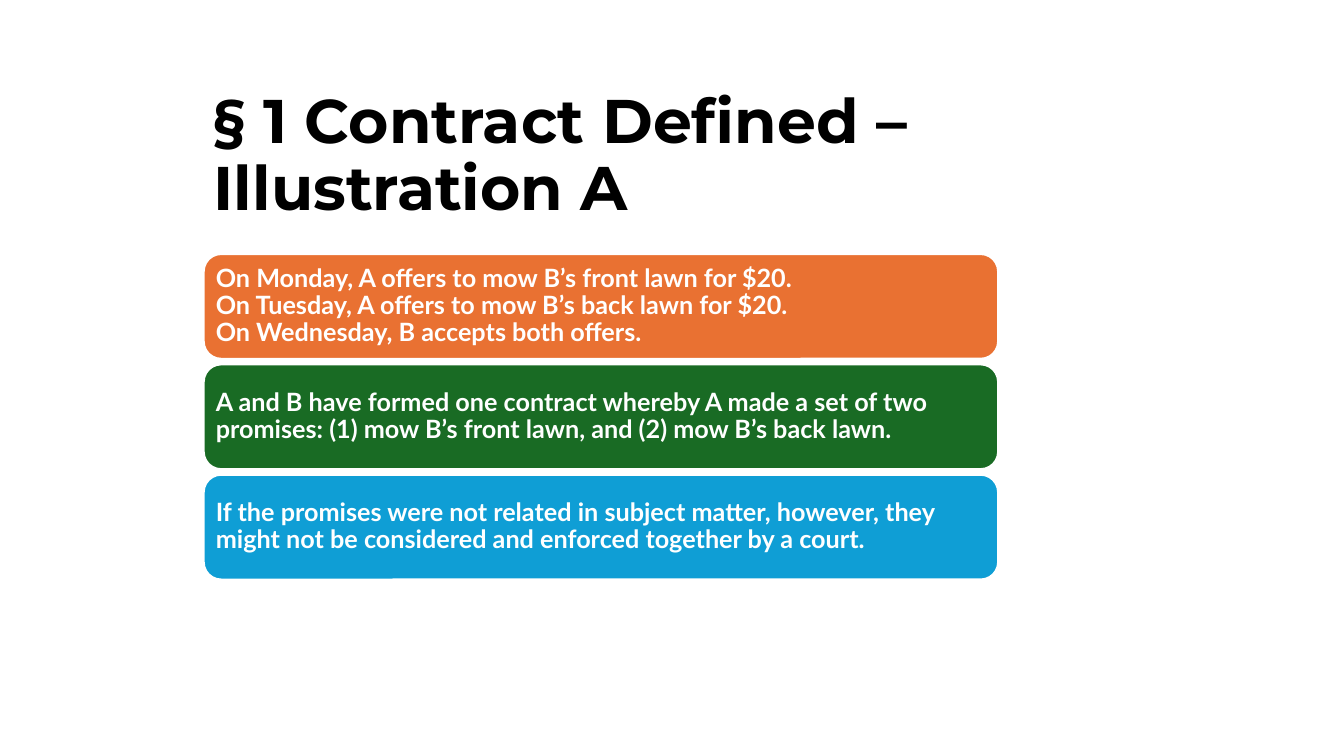
from dataclasses import dataclass

from pptx import Presentation
from pptx.dml.color import RGBColor
from pptx.enum.shapes import MSO_SHAPE
from pptx.enum.text import MSO_ANCHOR, MSO_AUTO_SIZE, PP_ALIGN
from pptx.slide import Slide
from pptx.text.text import TextFrame
from pptx.util import Inches, Pt

BLACK = RGBColor(0x00, 0x00, 0x00)
WHITE = RGBColor(0xFF, 0xFF, 0xFF)
ORANGE = RGBColor(0xE9, 0x71, 0x32)
GREEN = RGBColor(0x19, 0x6B, 0x24)
BLUE = RGBColor(0x0F, 0x9E, 0xD5)

LEFT = Inches(2.02)
TITLE_TOP, TITLE_WIDTH, TITLE_HEIGHT = Inches(0.75), Inches(9.45), Inches(1.62)
CARD_TOP, CARD_WIDTH, CARD_HEIGHT = Inches(2.52), Inches(7.88), Inches(1.04)
ROW_PITCH = Inches(1.095)
CARD_INSET = Inches(0.07)


@dataclass(frozen=True)
class Card:
    text: str
    fill: RGBColor


TITLE = "§ 1 Contract Defined –\vIllustration A"
CARDS = [
    Card(
        "On Monday, A offers to mow B’s front lawn for $20.\v"
        "On Tuesday, A offers to mow B’s back lawn for $20.\v"
        "On Wednesday, B accepts both offers.",
        ORANGE,
    ),
    Card(
        "A and B have formed one contract whereby A made a set of two promises: "
        "(1) mow B’s front lawn, and (2) mow B’s back lawn.",
        GREEN,
    ),
    Card(
        "If the promises were not related in subject matter, however, they might "
        "not be considered and enforced together by a court.",
        BLUE,
    ),
]


def set_text(tf: TextFrame, text: str, font: str, size: int, color: RGBColor) -> None:
    """Fill the frame with bold, left-aligned, vertically centred text."""
    tf.word_wrap = True
    tf.auto_size = MSO_AUTO_SIZE.NONE
    tf.vertical_anchor = MSO_ANCHOR.MIDDLE
    p = tf.paragraphs[0]
    p.text = text
    p.alignment = PP_ALIGN.LEFT
    p.line_spacing = 0.9
    for r in p.runs:
        r.font.name = font
        r.font.size = Pt(size)
        r.font.bold = True
        r.font.color.rgb = color


def add_title(s: Slide) -> None:
    sp = s.shapes.title
    sp.left, sp.top = LEFT, TITLE_TOP
    sp.width, sp.height = TITLE_WIDTH, TITLE_HEIGHT
    set_text(sp.text_frame, TITLE, "Montserrat", 44, BLACK)


def add_card(s: Slide, row: int, card: Card) -> None:
    sp = s.shapes.add_shape(
        MSO_SHAPE.ROUNDED_RECTANGLE,
        LEFT, CARD_TOP + row * ROW_PITCH, CARD_WIDTH, CARD_HEIGHT,
    )
    sp.shadow.inherit = False
    sp.fill.solid()
    sp.fill.fore_color.rgb = card.fill
    sp.line.color.rgb = WHITE
    sp.line.width = Pt(1.5)
    tf = sp.text_frame
    tf.margin_left = tf.margin_right = CARD_INSET
    tf.margin_top = tf.margin_bottom = CARD_INSET
    set_text(tf, card.text, "Lato", 18, WHITE)


def main() -> None:
    prs = Presentation()
    prs.slide_width, prs.slide_height = Inches(13.33), Inches(7.5)
    title_only = prs.slide_layouts.get_by_name("Title Only")
    s = prs.slides.add_slide(title_only)
    add_title(s)
    for row, card in enumerate(CARDS):
        add_card(s, row, card)
    prs.save("out.pptx")


if __name__ == "__main__":
    main()
